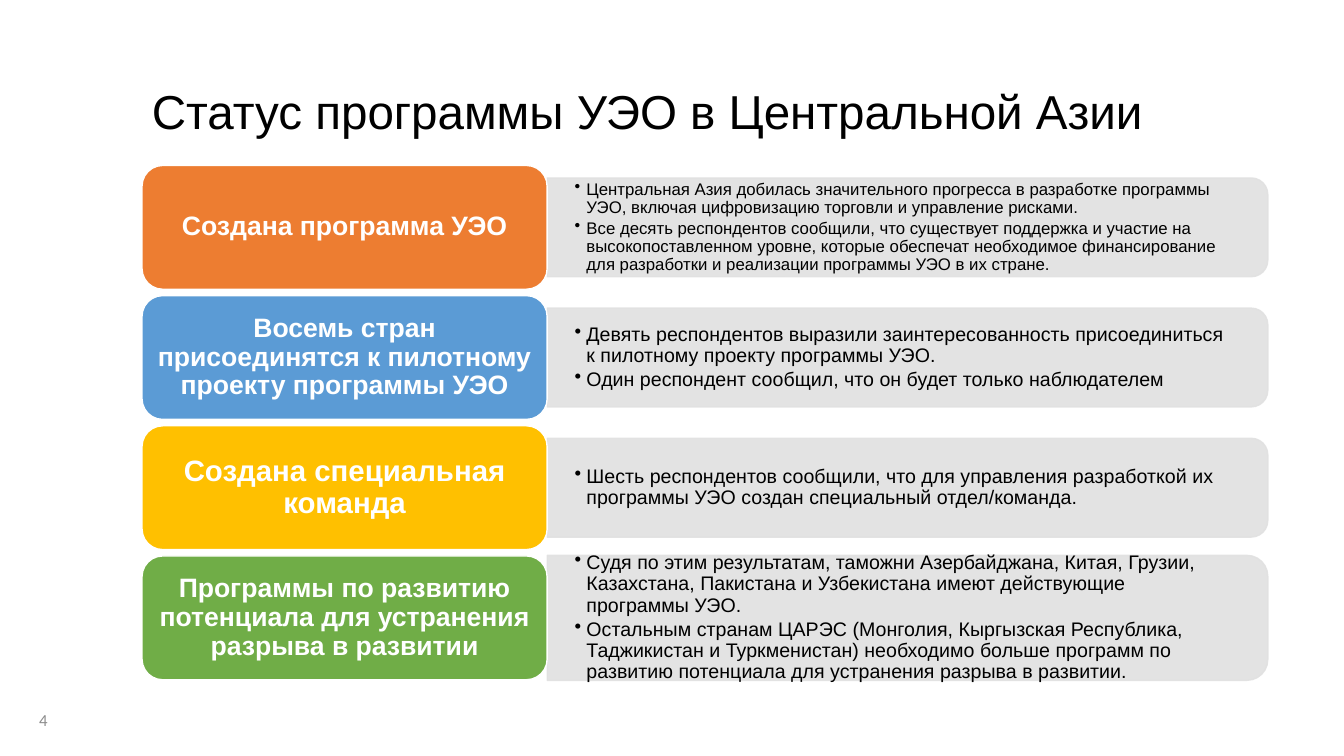
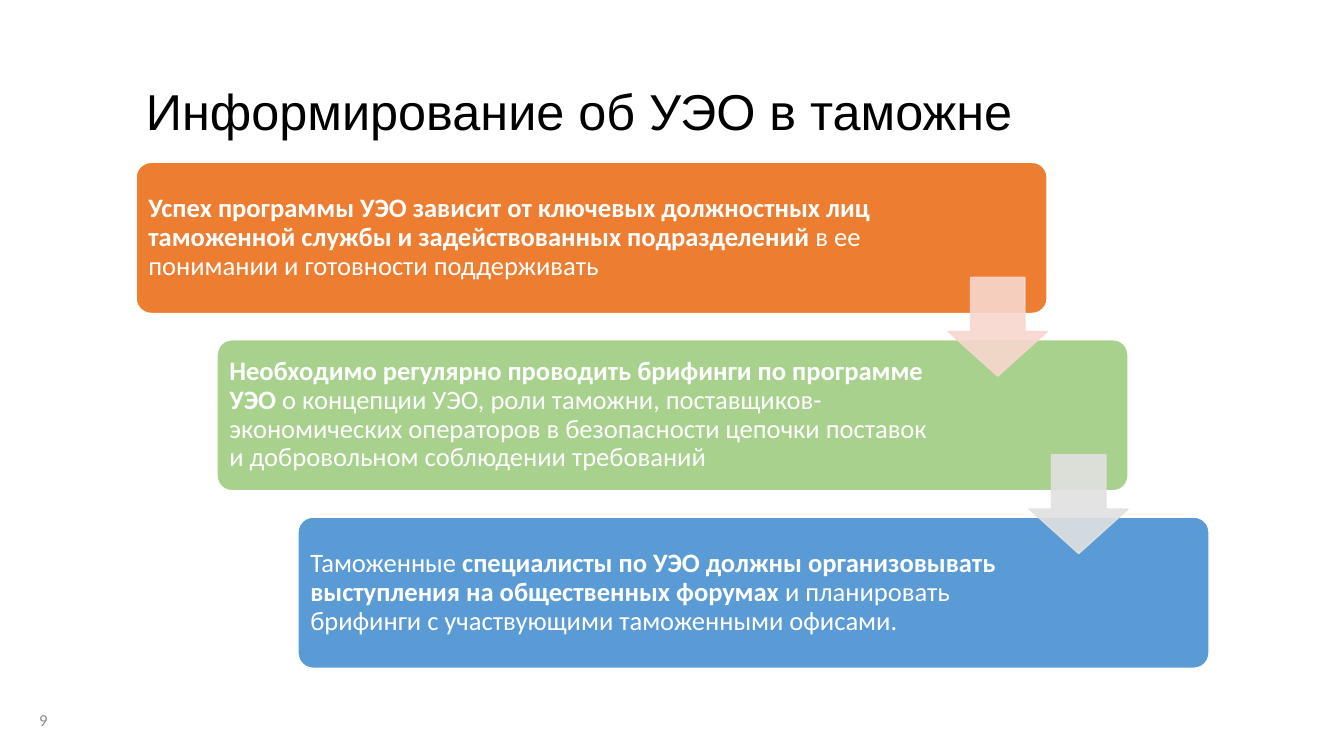
from lxml import etree
from pptx import Presentation
from pptx.dml.color import RGBColor
from pptx.enum.shapes import MSO_SHAPE
from pptx.enum.text import MSO_ANCHOR, PP_ALIGN
from pptx.oxml.ns import qn
from pptx.util import Cm, Pt

ROUNDED = MSO_SHAPE.ROUNDED_RECTANGLE
HALF_ROUNDED = MSO_SHAPE.ROUND_2_SAME_RECTANGLE
DOWN_ARROW = MSO_SHAPE.DOWN_ARROW
MIDDLE = MSO_ANCHOR.MIDDLE
LEFT, CENTER, RIGHT = PP_ALIGN.LEFT, PP_ALIGN.CENTER, PP_ALIGN.RIGHT

BLACK = RGBColor(0x00, 0x00, 0x00)
WHITE = RGBColor(0xFF, 0xFF, 0xFF)
NUMBER_GRAY = RGBColor(0x8C, 0x8C, 0x8C)
PANEL_GRAY = RGBColor(0xE1, 0xE1, 0xE1)
ORANGE = RGBColor(0xED, 0x7D, 0x31)
BLUE = RGBColor(0x5B, 0x9B, 0xD5)
YELLOW = RGBColor(0xFF, 0xC0, 0x00)
GREEN = RGBColor(0x70, 0xAD, 0x47)
LIGHT_GREEN = RGBColor(0xA9, 0xD1, 0x8E)
PINK = RGBColor(0xF8, 0xD7, 0xCE)

HEADING_FONT, BODY_FONT = "Arial", "Calibri"

STATUS_TITLE = "Статус программы УЭО в Центральной Азии"
STATUS_ROWS = [
    dict(label="Создана программа УЭО", color=ORANGE, label_size=19, size=12, height=2.49, points=[
        "Центральная Азия добилась значительного прогресса в разработке программы УЭО, "
        "включая цифровизацию торговли и управление рисками.",
        "Все десять респондентов сообщили, что существует поддержка и участие на "
        "высокопоставленном уровне, которые обеспечат необходимое финансирование для "
        "разработки и реализации программы УЭО в их стране."]),
    dict(label="Восемь стран присоединятся к пилотному проекту программы УЭО",
         color=BLUE, label_size=19, size=14, height=2.49, points=[
        "Девять респондентов выразили заинтересованность присоединиться к пилотному "
        "проекту программы УЭО.",
        "Один респондент сообщил, что он будет только наблюдателем"]),
    dict(label="Создана специальная команда", color=YELLOW, label_size=21, size=14, height=2.49, points=[
        "Шесть респондентов сообщили, что для управления разработкой их программы УЭО "
        "создан специальный отдел/команда."]),
    dict(label="Программы по развитию потенциала для устранения разрыва в развитии",
         color=GREEN, label_size=19, size=14, height=3.15, points=[
        "Судя по этим результатам, таможни Азербайджана, Китая, Грузии, Казахстана, "
        "Пакистана и Узбекистана имеют действующие программы УЭО.",
        "Остальным странам ЦАРЭС (Монголия, Кыргызская Республика, Таджикистан и "
        "Туркменистан) необходимо больше программ по развитию потенциала для "
        "устранения разрыва в развитии."]),
]

AWARENESS_TITLE = "Информирование об УЭО в таможне"
AWARENESS_STEPS = [
    dict(color=ORANGE, right_inset=4.1, arrow=PINK, runs=[
        ("Успех программы УЭО зависит от ключевых должностных лиц таможенной службы и "
         "задействованных подразделений ", True),
        ("в ее понимании и готовности поддерживать", False)]),
    dict(color=LIGHT_GREEN, right_inset=4.7, arrow=PANEL_GRAY, runs=[
        ("Необходимо регулярно проводить брифинги по программе УЭО ", True),
        ("о концепции УЭО, роли таможни, поставщиков- экономических операторов в "
         "безопасности цепочки поставок и добровольном соблюдении требований", False)]),
    dict(color=BLUE, right_inset=4.7, arrow=None, runs=[
        ("Таможенные ", False),
        ("специалисты по УЭО должны организовывать выступления на общественных форумах ", True),
        ("и планировать брифинги с участвующими таможенными офисами.", False)]),
]

LABEL_LEFT, LABEL_TOP, LABEL_WIDTH, LABEL_HEIGHT = 3.58, 4.17, 10.21, 3.12
ROW_PITCH = 3.28
PANEL_WIDTH, PANEL_TEXT_WIDTH = 18.16, 17.86
STEP_LEFT, STEP_TOP, STEP_WIDTH, STEP_HEIGHT = 3.43, 4.09, 22.96, 3.81
STEP_SHIFT, STEP_PITCH = 2.04, 4.47
ARROW_SIZE, ARROW_DROP = 2.49, 2.9


def add_filled_shape(slide, kind, box, color, line_color, opacity=None):
    shape = slide.shapes.add_shape(kind, *map(Cm, box))
    shape.shadow.inherit = False
    shape.fill.solid()
    shape.fill.fore_color.rgb = color
    shape.line.color.rgb = line_color
    shape.line.width = Pt(1)
    if opacity:
        for color_element in shape._element.spPr.iter(qn("a:srgbClr")):
            etree.SubElement(color_element, qn("a:alpha")).set("val", str(opacity * 1000))
    return shape


def write_text(shape, paragraphs, size, font, color, align=LEFT, insets=(0.25, 0.13, 0.25, 0.13),
               bulleted=False):
    frame = shape.text_frame
    frame.word_wrap = True
    frame.vertical_anchor = MIDDLE
    frame.margin_left, frame.margin_top, frame.margin_right, frame.margin_bottom = map(Cm, insets)
    for index, runs in enumerate(paragraphs):
        paragraph = frame.add_paragraph() if index else frame.paragraphs[0]
        paragraph.alignment = align
        paragraph.line_spacing = 0.9
        if bulleted:
            paragraph.space_after = Pt(round(size * 0.15, 1))
            properties = paragraph._p.get_or_add_pPr()
            properties.set("marL", str(Cm(0.3)))
            properties.set("indent", str(-Cm(0.3)))
            etree.SubElement(properties, qn("a:buChar")).set("char", "•")
        for text, bold in runs:
            run = paragraph.add_run()
            run.text = text
            run.font.size = Pt(size)
            run.font.name = font
            run.font.bold = bold
            run.font.color.rgb = color


def add_text(slide, box, paragraphs, *style, **options):
    write_text(slide.shapes.add_textbox(*map(Cm, box)), paragraphs, *style, **options)


def add_titled_slide(presentation, title, title_size, left, number):
    slide = presentation.slides.add_slide(presentation.slide_layouts[6])
    add_text(slide, (left, 1.03, 26.11, 3.68), [[(title, False)]], title_size, HEADING_FONT, BLACK)
    add_text(slide, (0.2, 17.65, 1.25, 1.02), [[(number, False)]], 12, BODY_FONT, NUMBER_GRAY,
             align=RIGHT)
    return slide


def add_status_row(slide, index, row):
    top = LABEL_TOP + index * ROW_PITCH
    middle = top + LABEL_HEIGHT / 2
    height = row["height"]
    panel_left = LABEL_LEFT + LABEL_WIDTH
    panel_center = panel_left + PANEL_WIDTH / 2
    panel = add_filled_shape(
        slide, HALF_ROUNDED,
        (panel_center - height / 2, middle - PANEL_WIDTH / 2, height, PANEL_WIDTH),
        PANEL_GRAY, PANEL_GRAY, opacity=90)
    panel.rotation = 90
    add_text(slide, (panel_left, middle - height / 2, PANEL_TEXT_WIDTH, height),
             [[(point, False)] for point in row["points"]], row["size"], HEADING_FONT, BLACK,
             insets=(0.69, 0.36, 0.69, 0.36), bulleted=True)
    label = add_filled_shape(slide, ROUNDED, (LABEL_LEFT, top, LABEL_WIDTH, LABEL_HEIGHT),
                             row["color"], WHITE)
    write_text(label, [[(row["label"], True)]], row["label_size"], HEADING_FONT, WHITE,
               align=CENTER, insets=(0.18, 0.1, 0.18, 0.1))


def add_step(slide, index, step):
    box = (STEP_LEFT + index * STEP_SHIFT, STEP_TOP + index * STEP_PITCH, STEP_WIDTH, STEP_HEIGHT)
    shape = add_filled_shape(slide, ROUNDED, box, step["color"], WHITE)
    shape.adjustments[0] = 0.1
    write_text(shape, [step["runs"]], 19, BODY_FONT, WHITE,
               insets=(0.2, 0.2, step["right_inset"], 0.2))


def add_step_arrow(slide, index, color):
    left = STEP_LEFT + index * STEP_SHIFT + STEP_WIDTH - ARROW_SIZE
    top = STEP_TOP + index * STEP_PITCH + ARROW_DROP
    arrow = add_filled_shape(slide, DOWN_ARROW, (left, top, ARROW_SIZE, ARROW_SIZE),
                             color, color, opacity=90)
    arrow.adjustments[0] = 0.55
    arrow.adjustments[1] = 0.45


def main():
    presentation = Presentation()
    presentation.slide_width, presentation.slide_height = Cm(33.87), Cm(19.05)

    status_slide = add_titled_slide(presentation, STATUS_TITLE, 34, LABEL_LEFT, "4")
    for index, row in enumerate(STATUS_ROWS):
        add_status_row(status_slide, index, row)

    awareness_slide = add_titled_slide(presentation, AWARENESS_TITLE, 36, STEP_LEFT, "9")
    for index, step in enumerate(AWARENESS_STEPS):
        add_step(awareness_slide, index, step)
    for index, step in enumerate(AWARENESS_STEPS):
        if step["arrow"]:
            add_step_arrow(awareness_slide, index, step["arrow"])

    presentation.save("out.pptx")


if __name__ == "__main__":
    main()
